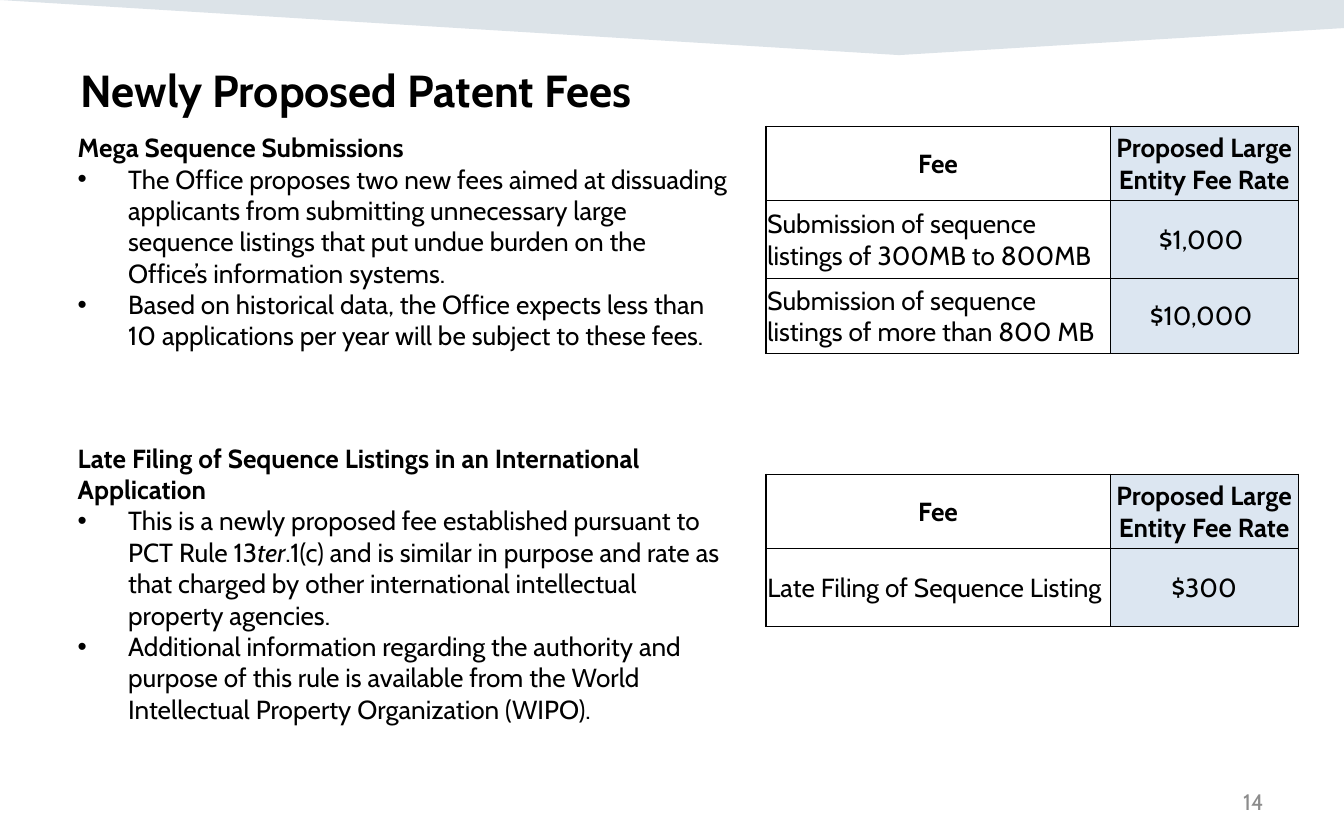
from lxml.etree import SubElement
from pptx import Presentation
from pptx.dml.color import RGBColor as Rgb
from pptx.enum.text import MSO_ANCHOR as Anchor, PP_ALIGN as Align
from pptx.oxml import parse_xml
from pptx.oxml.ns import nsdecls, qn
from pptx.util import Inches, Pt

COLORS = {"ink": "000000", "muted": "8C8C8C", "banner": "164469",
          "rate": "DCE6F1", "paper": "FFFFFF"}
FONT = "Cabin"
WIDTH, HEIGHT = Inches(10), Inches(6.25)
UNIT = WIDTH // 100

TEXT_LEFT, TEXT_WIDTH = 4.8, 50.5
TABLE_LEFT, FEE_COL, RATE_COL = 57, 25.6, 14
HEADER_ROW, ROW_HEIGHTS = 5.5, [5.8, 5.6]
BULLET_INDENT = 3.75


def grid(*cells):
    return [int(cell * UNIT) for cell in cells]


def add_text(paragraph, text, size=14, color="ink", **style):
    run = paragraph.add_run()
    run.text = text
    font_values = {"name": FONT, "size": Pt(size), **style}
    for attribute, value in font_values.items():
        setattr(run.font, attribute, value)
    run.font.color.rgb = Rgb.from_string(COLORS[color])


def add_frame(slide, box, anchor=Anchor.TOP):
    frame = slide.shapes.add_textbox(*grid(*box)).text_frame
    for attribute, value in {"word_wrap": True, "vertical_anchor": anchor}.items():
        setattr(frame, attribute, value)
    return frame


def banner(slide, box):
    left, top, width, height = grid(*box)
    builder = slide.shapes.build_freeform(left, top)
    corners = [(1, 0), (1, 0.51), (0.669, 1)]
    builder.add_line_segments([(left + int(width * x), top + int(height * y))
                               for x, y in corners])
    band = builder.convert_to_shape()
    band.shadow.inherit = False
    band.line.fill.background()
    band.fill.solid()
    band.fill.fore_color.rgb = Rgb.from_string(COLORS["banner"])
    tint = band.fill._xPr.find(".//" + qn("a:srgbClr"))
    SubElement(tint, qn("a:alpha"), val="15000")


def label(slide, box, text, align, **style):
    paragraph = add_frame(slide, box, Anchor.MIDDLE).paragraphs[0]
    paragraph.alignment = align
    add_text(paragraph, text, **style)


def add_bullet(paragraph):
    properties = paragraph._p.get_or_add_pPr()
    indent = grid(BULLET_INDENT)[0]
    for name, value in {"marL": indent, "indent": -indent}.items():
        properties.set(name, str(value))
    SubElement(properties, qn("a:buFont"), typeface="Arial")
    SubElement(properties, qn("a:buChar"), char="•")


def explanation(slide, box, heading, points):
    frame = add_frame(slide, box)
    add_text(frame.paragraphs[0], heading, bold=True)
    for point in points:
        paragraph = frame.add_paragraph()
        add_bullet(paragraph)
        for text, italic in point:
            add_text(paragraph, text, italic=italic)


def set_borders(cell, widths):
    properties = cell._tc.get_or_add_tcPr()
    for position, (side, width) in enumerate(widths.items()):
        properties.insert(position, parse_xml(
            f'<a:ln{side} {nsdecls("a")} w="{Pt(width)}"><a:solidFill>'
            f'<a:srgbClr val="{COLORS["ink"]}"/></a:solidFill></a:ln{side}>'))


def fee_table(slide, box, fees):
    rows = [("Fee", "Proposed Large Entity Fee Rate"), *fees]
    table = slide.shapes.add_table(len(rows), 2, *grid(*box)).table
    for column, width in zip(table.columns, grid(FEE_COL, RATE_COL)):
        column.width = width
    for row, height in zip(table.rows, grid(HEADER_ROW, *ROW_HEIGHTS)):
        row.height = height
    margin = Inches(0.01)
    cell_values = {"vertical_anchor": Anchor.MIDDLE, "margin_left": margin,
                   "margin_right": margin, "margin_top": margin, "margin_bottom": 0}
    for r, texts in enumerate(rows):
        for c, text in enumerate(texts):
            cell = table.cell(r, c)
            for attribute, value in cell_values.items():
                setattr(cell, attribute, value)
            cell.fill.solid()
            cell.fill.fore_color.rgb = Rgb.from_string(COLORS["rate" if c else "paper"])
            set_borders(cell, {"L": 0.5 if c else 1, "R": 0.5,
                               "T": 0.5 if r else 1, "B": 0.5})
            paragraph = cell.text_frame.paragraphs[0]
            paragraph.alignment = Align.LEFT if r and not c else Align.CENTER
            add_text(paragraph, text, bold=r == 0)


def section(slide, text_top, text_height, table_top, heading, points, fees):
    explanation(slide, (TEXT_LEFT, text_top, TEXT_WIDTH, text_height), heading, points)
    table_height = HEADER_ROW + sum(ROW_HEIGHTS[:len(fees)])
    fee_table(slide, (TABLE_LEFT, table_top, FEE_COL + RATE_COL, table_height), fees)


def main():
    deck = Presentation()
    deck.slide_width, deck.slide_height = WIDTH, HEIGHT
    slide = deck.slides.add_slide(deck.slide_layouts[6])
    banner(slide, (0, 0, 100, 4.1))
    label(slide, (5, 4.1, 90, 5.1), "Newly Proposed Patent Fees", Align.LEFT,
          size=24, bold=True)
    label(slide, (71.7, 58, 23.3, 3.3), "14", Align.RIGHT, size=12, color="muted")
    section(
        slide, 9.3, 21.7, 9.4, "Mega Sequence Submissions",
        [[("The Office proposes two new fees aimed at dissuading applicants from "
           "submitting unnecessary large sequence listings that put undue burden on "
           "the Office’s information systems.", False)],
         [("Based on historical data, the Office expects less than 10 applications "
           "per year will be subject to these fees.", False)]],
        [("Submission of sequence listings of 300MB to 800MB", "$1,000 "),
         ("Submission of sequence listings of more than 800 MB", "$10,000 ")])
    section(
        slide, 32.4, 25.2, 35.3,
        "Late Filing of Sequence Listings in an International Application",
        [[("This is a newly proposed fee established pursuant to PCT Rule 13", False),
          ("ter", True),
          (".1(c) and is similar in purpose and rate as that charged by other "
           "international intellectual property agencies.", False)],
         [("Additional information regarding the authority and purpose of this rule is "
           "available from the World Intellectual Property Organization (WIPO).", False)]],
        [("Late Filing of Sequence Listing", "$300")])
    deck.save("out.pptx")


if __name__ == "__main__":
    main()
